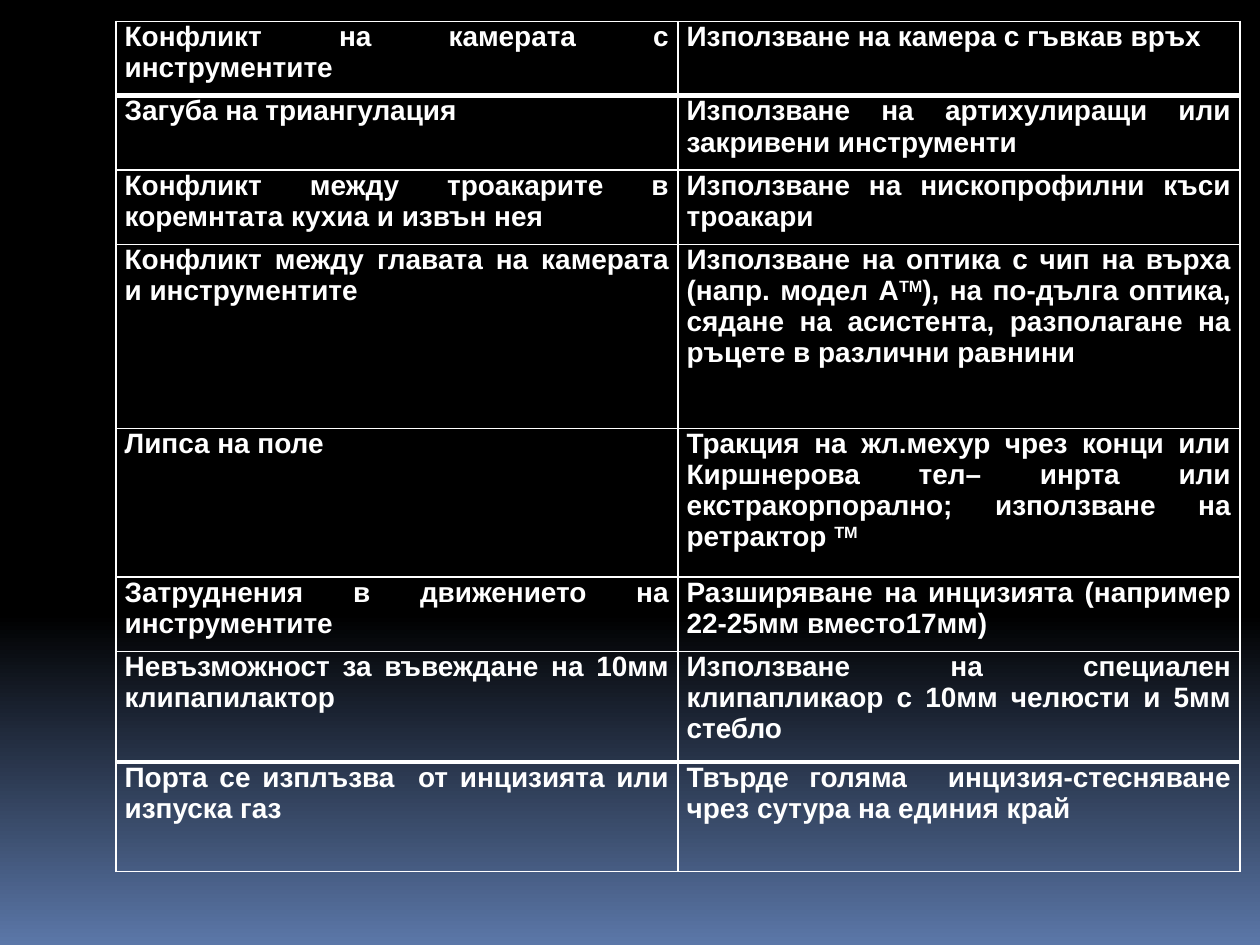
from copy import deepcopy

from lxml import etree
from pptx import Presentation
from pptx.dml.color import RGBColor
from pptx.enum.text import PP_ALIGN
from pptx.oxml.ns import qn
from pptx.util import Inches, Pt

JUSTIFY = PP_ALIGN.JUSTIFY
BLANK_LAYOUT = 6
COLORS = {"text": "FFFFFF", "border": "FFFFFF", "night": "000000", "dusk": "5B77A8"}
FONT = "Arial"
FONT_SIZE = 16
THIN, THICK = 1, 3
TRADEMARK = "TM"

COLUMN_WIDTH = 4.46
ROW_HEIGHTS = [0.59, 0.59, 0.59, 1.46, 1.18, 0.59, 0.88, 0.87]
PROBLEMS_AND_SOLUTIONS = [
    ("Конфликт на камерата с инструментите",
     "Използване на камера с гъвкав връх"),
    ("Загуба на триангулация",
     "Използване на артихулиращи или закривени инструменти"),
    ("Конфликт между троакарите в коремнтата кухиа и извън нея",
     "Използване на нископрофилни къси троакари"),
    ("Конфликт между главата на камерата и инструментите",
     "Използване на оптика с чип на върха (напр. модел АTM), на по-дълга оптика, "
     "сядане на асистента, разполагане на ръцете в различни равнини"),
    ("Липса на поле",
     "Тракция на жл.мехур чрез конци или Киршнерова тел– инрта или "
     "екстракорпорално; използване на ретрактор TM"),
    ("Затруднения в движението на инструментите",
     "Разширяване на инцизията (например 22-25мм вместо17мм)"),
    ("Невъзможност за въвеждане на 10мм клипапилактор",
     "Използване на специален клипапликаор с 10мм челюсти и 5мм стебло"),
    ("Порта се изплъзва  от инцизията или изпуска газ",
     "Твърде голяма  инцизия-стесняване чрез сутура на единия край"),
]


def set_background(slide):
    """Fill the slide with black that turns blue in its lower third."""
    fill = slide.background.fill
    fill.gradient()
    fill.gradient_angle = 270
    stop_list = slide.element.find(".//" + qn("a:gsLst"))
    stop_list.append(deepcopy(stop_list[-1]))
    stops = [(0, "night"), (0.65, "night"), (1, "dusk")]
    for stop, (position, color) in zip(fill.gradient_stops, stops):
        stop.position = position
        stop.color.rgb = RGBColor.from_string(COLORS[color])


def set_borders(cell, top, bottom):
    """Draw the four cell borders; top and bottom are widths in points."""
    properties = cell._tc.get_or_add_tcPr()
    widths = {"a:lnL": THIN, "a:lnR": THIN, "a:lnT": top, "a:lnB": bottom}
    for index, (tag, width) in enumerate(widths.items()):
        line = etree.Element(qn(tag), w=str(Pt(width)))
        solid_fill = etree.SubElement(line, qn("a:solidFill"))
        etree.SubElement(solid_fill, qn("a:srgbClr"), val=COLORS["border"])
        properties.insert(index, line)


def write_text(cell, text):
    """Write justified bold text with the trademark sign raised."""
    cell.margin_left = cell.margin_right = Inches(0.07)
    cell.margin_top = cell.margin_bottom = 0
    paragraph = cell.text_frame.paragraphs[0]
    paragraph.alignment = JUSTIFY
    for part in filter(None, text.partition(TRADEMARK)):
        run = paragraph.add_run()
        run.text = part
        run.font.name = FONT
        run.font.size = Pt(FONT_SIZE)
        run.font.bold = True
        run.font.color.rgb = RGBColor.from_string(COLORS["text"])
        if part == TRADEMARK:
            run._r.get_or_add_rPr().set("baseline", "30000")


def add_problem_table(slide):
    row_count = len(ROW_HEIGHTS)
    table = slide.shapes.add_table(
        row_count, 2, Inches(0.92), Inches(0.17),
        Inches(2 * COLUMN_WIDTH), Inches(sum(ROW_HEIGHTS))).table
    table.first_row = table.horz_banding = False
    for column in table.columns:
        column.width = Inches(COLUMN_WIDTH)

    # The rules below the first row and above the last row are thick.
    rules = [THIN] * (row_count + 1)
    rules[1] = rules[-2] = THICK
    for row_index, texts in enumerate(PROBLEMS_AND_SOLUTIONS):
        table.rows[row_index].height = Inches(ROW_HEIGHTS[row_index])
        for column_index, text in enumerate(texts):
            cell = table.cell(row_index, column_index)
            cell.fill.background()
            set_borders(cell, rules[row_index], rules[row_index + 1])
            write_text(cell, text)


def main():
    presentation = Presentation()
    presentation.slide_width = Inches(10)
    presentation.slide_height = Inches(7.5)
    slide = presentation.slides.add_slide(presentation.slide_layouts[BLANK_LAYOUT])
    set_background(slide)
    add_problem_table(slide)
    presentation.save("out.pptx")


if __name__ == "__main__":
    main()
